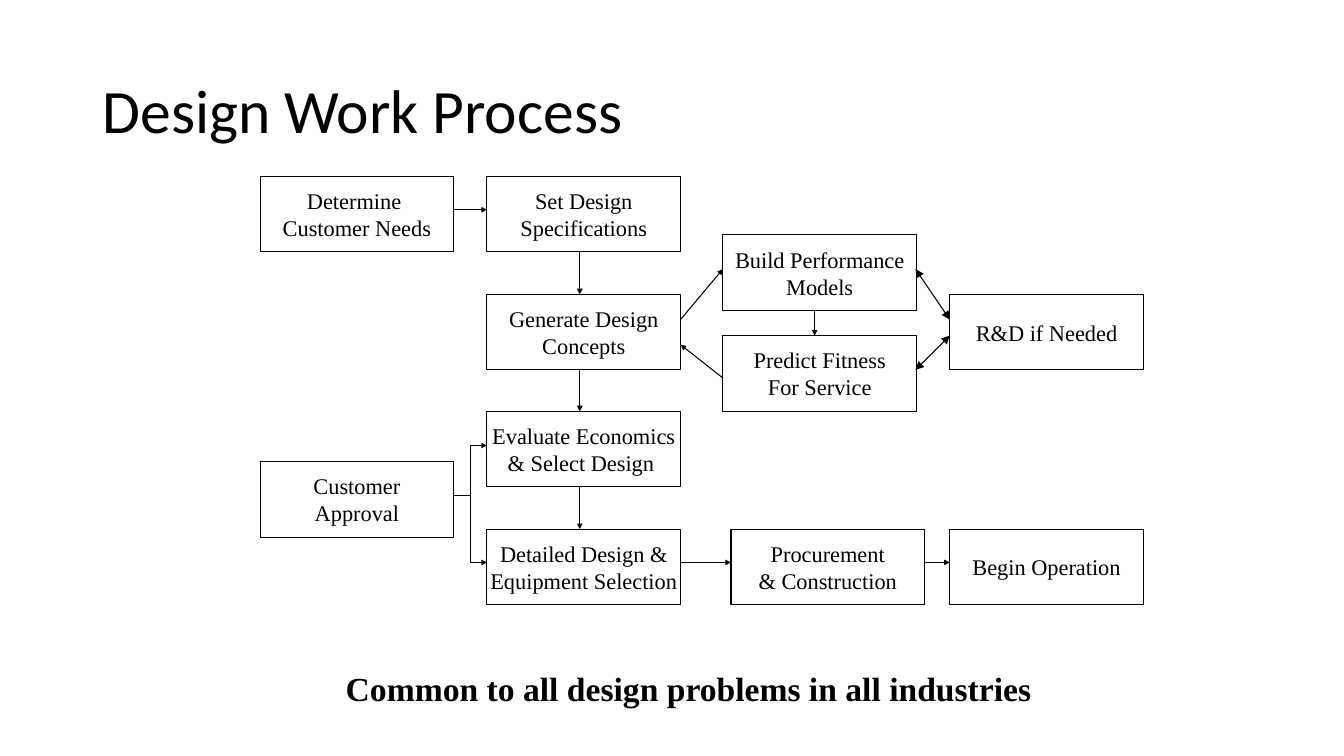
from pptx import Presentation
from pptx.dml.color import RGBColor
from pptx.enum.shapes import MSO_CONNECTOR as CONN, MSO_SHAPE as SHAPE
from pptx.enum.text import MSO_ANCHOR as ANCHOR, PP_ALIGN as ALIGN
from pptx.oxml.ns import qn
from pptx.util import Inches, Pt
from lxml.etree import SubElement

BLACK, WHITE = "000000", "FFFFFF"
SERIF = "Times New Roman"
BOX_W, BOX_H = 1.92, 0.75
COL_1, COL_2, COL_3, COL_4 = 2.58, 4.83, 7.17, 9.42
ROW_1, ROW_2, ROW_3, ROW_4 = 1.75, 2.92, 4.08, 5.25

STEPS = [
    (COL_1, ROW_1, ["Determine ", "Customer Needs"]),
    (COL_2, ROW_1, ["Set Design", "Specifications"]),
    (COL_4, ROW_2, ["R&D if Needed"]),
    (COL_2, ROW_3, ["Evaluate Economics", "& Select Design "]),
    (COL_3, 3.33, ["Predict Fitness", "For Service"]),
    (COL_3, 2.33, ["Build Performance", "Models"]),
    (COL_2, ROW_2, ["Generate Design", "Concepts"]),
    (7.25, ROW_4, ["Procurement", "& Construction"]),
    (COL_4, ROW_4, ["Begin Operation"]),
    (COL_1, 4.58, ["Customer", "Approval"]),
    (COL_2, ROW_4, ["Detailed Design &", "Equipment Selection"]),
]
ARROWS = [
    (4.5, 2.08, COL_2, 2.08),
    (6.75, 5.58, 7.25, 5.58),
    (9.17, 5.58, COL_4, 5.58),
    (6.75, 3.17, COL_3, 2.67),
    (8.08, 3.08, 8.08, 3.33),
    (COL_3, 3.75, 6.75, 3.42),
]
TWO_WAY_ARROWS = [(9.08, 2.67, COL_4, 3.17), (9.08, 3.67, COL_4, 3.33)]
APPROVAL_PATHS = [
    [(4.5, 4.92), (4.67, 4.92), (4.67, 4.42), (COL_2, 4.42)],
    [(4.67, 4.92), (4.67, 5.58), (COL_2, 5.58)],
]


def rgb(color):
    return RGBColor.from_string(color)


def write(tf, lines, size, align=ALIGN.LEFT, font=SERIF, bold=False, spacing=None):
    for i, line in enumerate(lines):
        p = tf.paragraphs[0] if i == 0 else tf.add_paragraph()
        p.alignment = align
        p.line_spacing = spacing
        r = p.add_run()
        r.text = line
        for name, value in {"name": font, "size": Pt(size), "bold": bold}.items():
            setattr(r.font, name, value)
        r.font.color.rgb = rgb(BLACK)


def add_text(s, box, lines, size, wrap, anchor=ANCHOR.TOP, **style):
    tf = s.shapes.add_textbox(*map(Inches, box)).text_frame
    tf.word_wrap = wrap
    tf.vertical_anchor = anchor
    write(tf, lines, size, **style)


def set_line(sp):
    sp.line.color.rgb = rgb(BLACK)
    sp.line.width = Pt(0.75)


def add_heads(sp, ends, size):
    ln = sp.line._get_or_add_ln()
    for end in ends:
        SubElement(ln, qn(f"a:{end}"), type="triangle", w=size, len=size)


def add_step(s, left, top, lines):
    sp = s.shapes.add_shape(SHAPE.RECTANGLE, *map(Inches, (left, top, BOX_W, BOX_H)))
    sp.shadow.inherit = False
    sp.fill.solid()
    sp.fill.fore_color.rgb = rgb(WHITE)
    set_line(sp)
    tf = sp.text_frame
    tf.word_wrap = False
    tf.vertical_anchor = ANCHOR.MIDDLE
    write(tf, lines, 16, ALIGN.CENTER)


def add_arrow(s, points, two_way=False):
    sp = s.shapes.add_connector(CONN.STRAIGHT, *map(Inches, points))
    set_line(sp)
    SubElement(sp._element.spPr, qn("a:effectLst"))
    if two_way:
        add_heads(sp, ["headEnd", "tailEnd"], "med")
    else:
        add_heads(sp, ["tailEnd"], "sm")


def add_elbow(s, points):
    """Draw an open path with an arrowhead at its last point."""
    start, *rest = [(Inches(x), Inches(y)) for x, y in points]
    builder = s.shapes.build_freeform(*start)
    builder.add_line_segments(rest, close=False)
    sp = builder.convert_to_shape()
    sp.shadow.inherit = False
    sp.fill.background()
    set_line(sp)
    add_heads(sp, ["tailEnd"], "sm")


def main():
    prs = Presentation()
    prs.slide_width, prs.slide_height = Inches(13.33), Inches(7.5)
    s = prs.slides.add_slide(prs.slide_layouts[6])

    add_text(s, (0.92, 0.4, 11.5, 1.45), ["Design Work Process"], 44, True,
             ANCHOR.MIDDLE, font="Calibri", spacing=0.9)
    for step in STEPS:
        add_step(s, *step)
    for upper, lower in zip((ROW_1, ROW_2, ROW_3), (ROW_2, ROW_3, ROW_4)):
        add_arrow(s, (5.75, upper + BOX_H, 5.75, lower))
    for arrow in ARROWS:
        add_arrow(s, arrow)
    for arrow in TWO_WAY_ARROWS:
        add_arrow(s, arrow, two_way=True)
    for points in APPROVAL_PATHS:
        add_elbow(s, points)
    add_text(s, (3.33, 6.58, 7.01, 0.5),
             ["Common to all design problems in all industries"], 24, False, bold=True)

    prs.save("out.pptx")


if __name__ == "__main__":
    main()
